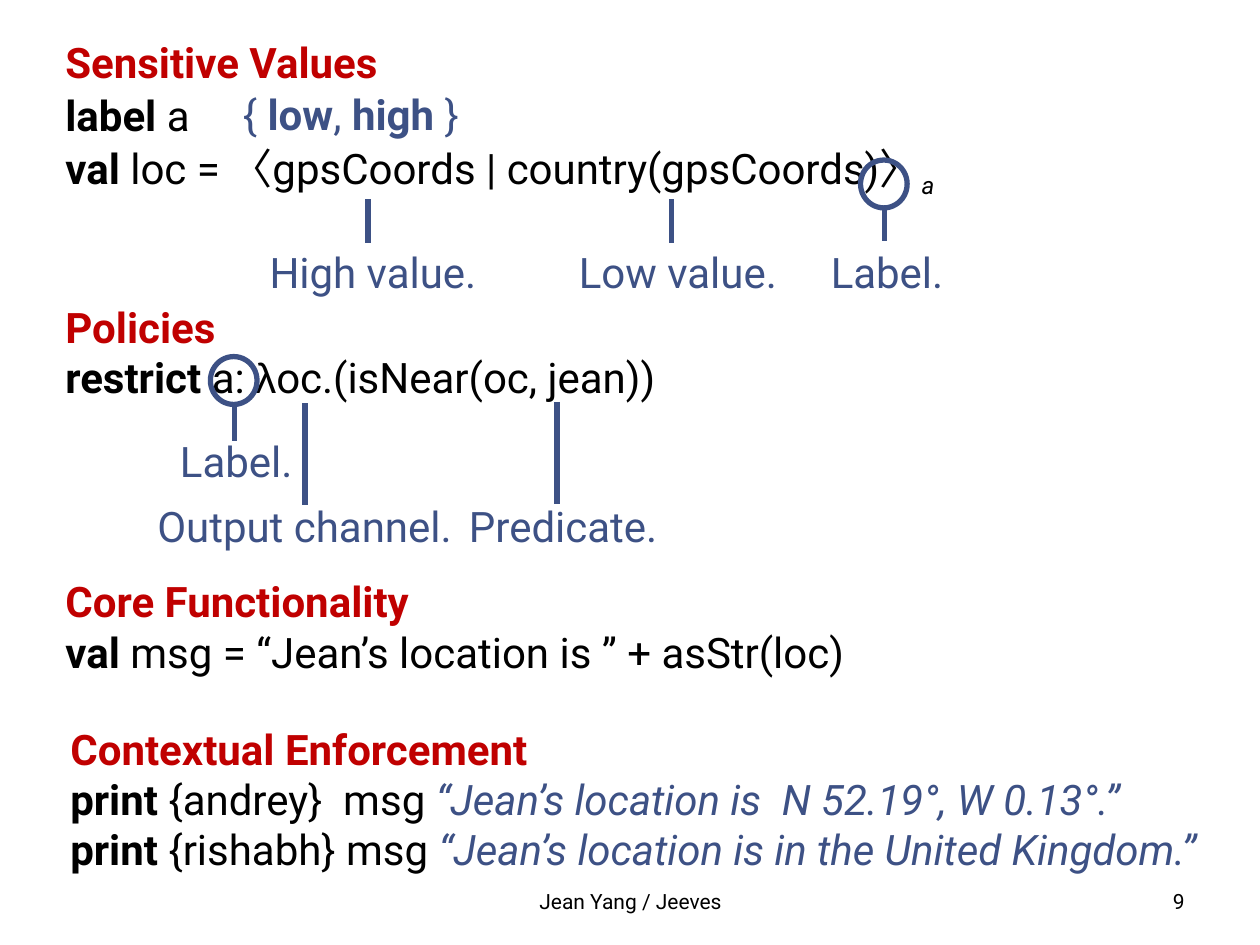
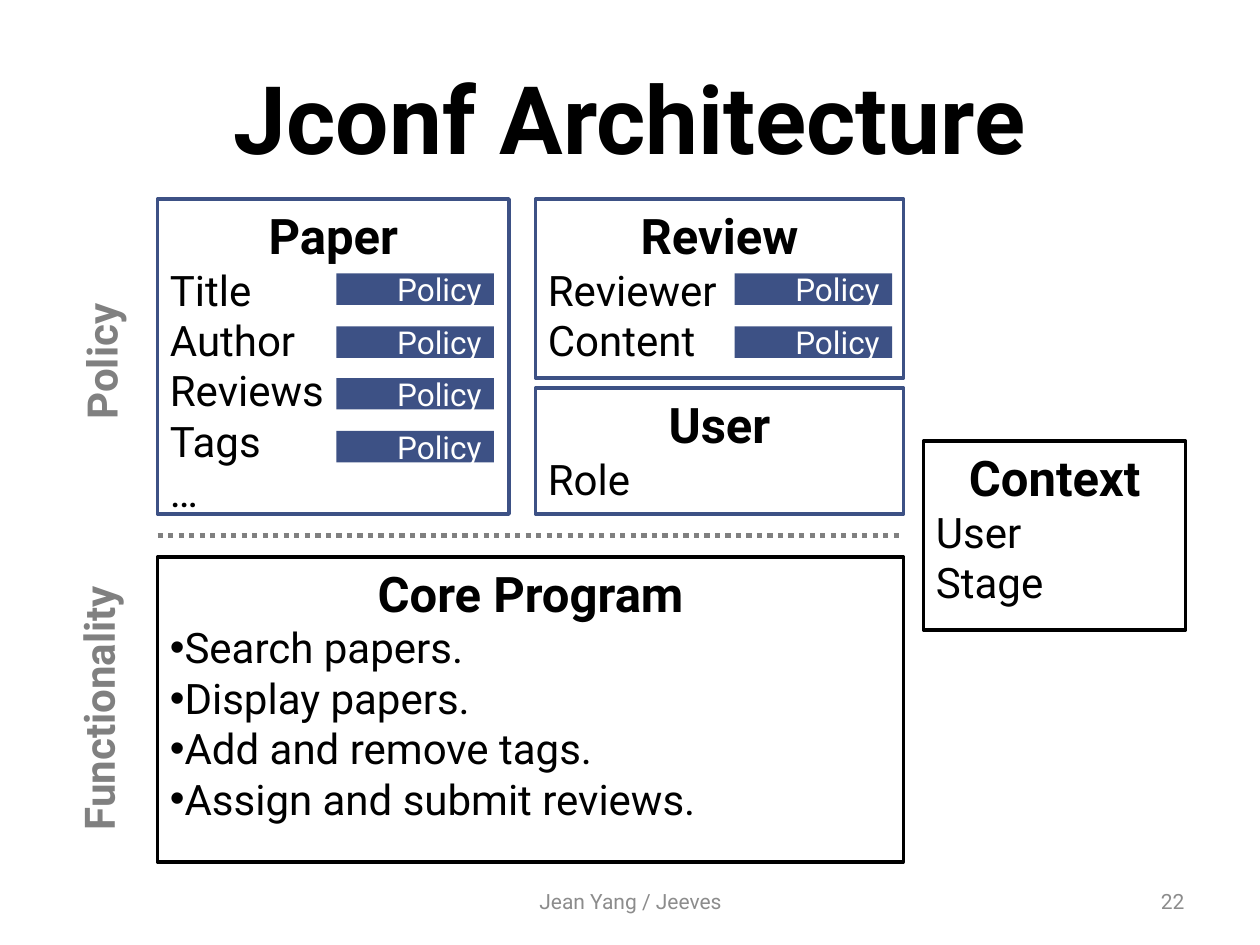
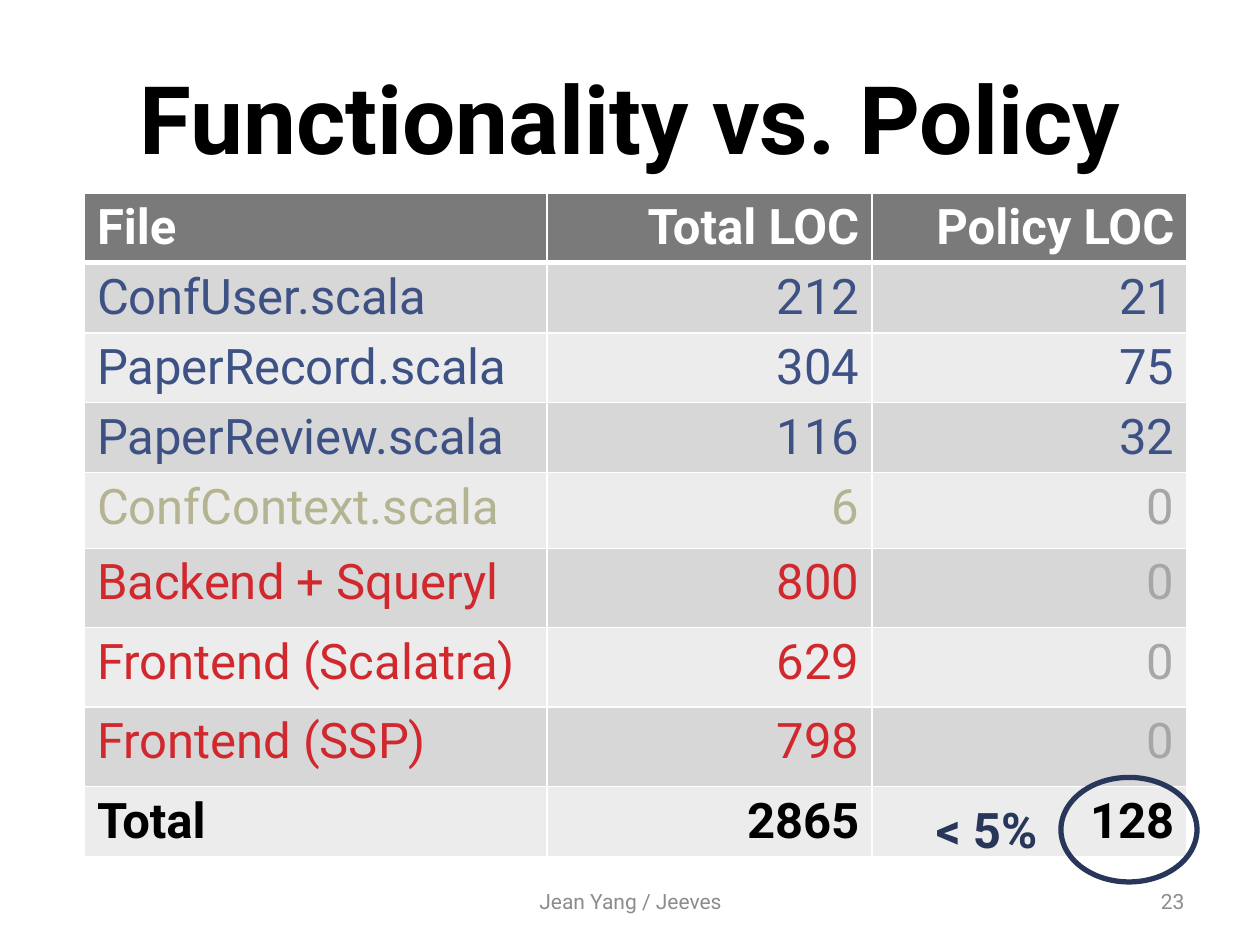
import lxml.etree
import pptx
import pptx.dml.color
import pptx.enum.dml
import pptx.enum.shapes
import pptx.enum.text
import pptx.oxml.ns
import pptx.util

Inches = pptx.util.Inches
Pt = pptx.util.Pt
ALIGN = pptx.enum.text.PP_ALIGN
ANCHOR = pptx.enum.text.MSO_ANCHOR
SHAPE = pptx.enum.shapes.MSO_SHAPE
DOTS = pptx.enum.dml.MSO_LINE.ROUND_DOT

BLACK, WHITE, RED = "000000", "FFFFFF", "C00000"
BLUE, NAVY, GREY, PALE = "3D5185", "283659", "808080", "8C8C8C"
HEAD, DARK, LIGHT = "7A7A7A", "D7D7D7", "ECECEC"
SAND, ROSE, ZERO = "B4B392", "D1282E", "A6A6A6"

BASE = {"name": "Roboto", "size": Pt(24), "bold": False, "italic": False}
BOLD = {"bold": True}
QUOTE = {"italic": True, "color": BLUE}
TOPIC = {"bold": True, "color": RED}
NOTE = {"color": BLUE}
SIDE = {"bold": True, "color": GREY}
LARGE = {"bold": True, "size": Pt(28)}
TITLE = {"bold": True, "size": Pt(54)}
LEFT, MID, RIGHT = ALIGN.LEFT, ALIGN.CENTER, ALIGN.RIGHT


def tint(code):
    return pptx.dml.color.RGBColor.from_string(code)


def add_tag(root, tag, **vals):
    return lxml.etree.SubElement(root, pptx.oxml.ns.qn(tag), vals)


def apply(item, vals):
    for key, val in vals.items():
        setattr(item, key, val)


def add_run(para, text, style):
    run = para.add_run()
    run.text = text
    vals = BASE | style
    run.font.color.rgb = tint(vals.pop("color", BLACK))
    shift = vals.pop("shift", None)
    apply(run.font, vals)
    if shift:
        run.font._element.set("baseline", shift)


def write(frame, lines, align=LEFT, anchor=ANCHOR.TOP):
    apply(frame, {"word_wrap": True, "vertical_anchor": anchor})
    for row, runs in enumerate(lines):
        para = frame.add_paragraph() if row else frame.paragraphs[0]
        para.alignment = align
        for text, style in runs:
            add_run(para, text, style)


def add_text(slide, at, lines, align=LEFT, anchor=ANCHOR.TOP, turn=0):
    box = slide.shapes.add_textbox(*map(Inches, at))
    box.rotation = turn
    write(box.text_frame, lines, align, anchor)


def add_form(slide, kind, at, fill=None, line=None, width=2):
    form = slide.shapes.add_shape(kind, *map(Inches, at))
    form.shadow.inherit = False
    if fill:
        form.fill.solid()
        form.fill.fore_color.rgb = tint(fill)
    else:
        form.fill.background()
    if line:
        form.line.color.rgb = tint(line)
        form.line.width = Pt(width)
    else:
        form.line.fill.background()
    return form


def add_line(slide, start, end, color=BLUE, dash=None):
    kind = pptx.enum.shapes.MSO_CONNECTOR.STRAIGHT
    link = slide.shapes.add_connector(kind, *map(Inches, start + end))
    link.line.color.rgb = tint(color)
    apply(link.line, {"width": Pt(3), "dash_style": dash})
    add_tag(link._element.spPr, "a:effectLst")


def add_card(slide, at, name, items, line=BLUE, mark=None):
    frame = add_form(slide, SHAPE.RECTANGLE, at, line=line).text_frame
    write(frame, [[(name, LARGE)]] + [[(item, {})] for item in items])
    first, *rest = frame.paragraphs
    first.alignment = MID
    for para in rest if mark else []:
        props = para._p.get_or_add_pPr()
        apply_bullet = {"marL": "0", "indent": "0"}
        for key, val in apply_bullet.items():
            props.set(key, val)
        add_tag(props, "a:buFont", typeface="Arial")
        add_tag(props, "a:buChar", char=mark)


def add_badge(slide, left, row):
    at = (left, round(2.17 + row * 1.25 / 3, 2), 1.25, 0.25)
    badge = add_form(slide, SHAPE.RECTANGLE, at, fill=BLUE)
    style = {"size": Pt(18), "color": WHITE}
    write(badge.text_frame, [[("Policy", style)]], RIGHT, ANCHOR.MIDDLE)


def add_foot(slide, page, color=PALE):
    style = {"size": Pt(12), "color": color}
    for left, width, text, align in ((3.42, 3.17, "Jean Yang / Jeeves", MID),
                                     (7.17, 2.33, page, RIGHT)):
        add_text(slide, (left, 6.95, width, 0.4), [[(text, style)]],
                 align, ANCHOR.MIDDLE)


def add_title(slide, text):
    shape = slide.shapes.title
    at = map(Inches, (0.5, 0.3, 9, 1.25))
    apply(shape, dict(zip(("left", "top", "width", "height"), at)))
    shape.text_frame.auto_size = pptx.enum.text.MSO_AUTO_SIZE.NONE
    write(shape.text_frame, [[(text, TITLE)]], MID, ANCHOR.MIDDLE)


def add_edge(cell, row):
    props = cell._tc.get_or_add_tcPr()
    for side in "LRTB":
        thick = (row, side) in ((0, "B"), (1, "T"))
        line = add_tag(props, "a:ln" + side, w=str(Pt(3 if thick else 1)))
        add_tag(add_tag(line, "a:solidFill"), "a:srgbClr", val=WHITE)


def add_grid(slide, at, cols, highs, rows):
    table = slide.shapes.add_table(
        len(rows), len(cols), *map(Inches, at)).table
    for col, width in zip(table.columns, cols):
        col.width = Inches(width)
    for row, (high, (color, bold, *texts)) in enumerate(zip(highs, rows)):
        table.rows[row].height = Inches(high)
        fill = (DARK if row % 2 else LIGHT) if row else HEAD
        for col, text in enumerate(texts):
            cell = table.cell(row, col)
            add_edge(cell, row)
            cell.fill.solid()
            cell.fill.fore_color.rgb = tint(fill)
            style = {"size": Pt(28), "bold": bold,
                     "color": ZERO if text == "0" else color}
            write(cell.text_frame, [[(text, style)]], RIGHT if col else LEFT)


def show_code(slide):
    add_text(slide, (0.42, 1.08, 8.92, 0.5), [[
        ("val ", BOLD), ("loc = 〈gpsCoords | country(gpsCoords)〉", {}),
        ("a", {"italic": True, "shift": "-25000"})]])
    add_text(slide, (0.42, 0.66, 4, 0.5), [[("label", BOLD), (" a", {})]])
    add_text(slide, (0.42, 4.52, 7.65, 0.91), [
        [("Core Functionality", TOPIC)],
        [("val ", BOLD), ("msg = “Jean’s location is ” + asStr(loc)", {})]])
    add_text(slide, (0.46, 5.69, 9.46, 1.31), [
        [("Contextual Enforcement", TOPIC)],
        [("print", BOLD), (" {andrey}  msg ", {}),
         ("“Jean’s location is  N 52.19°, W 0.13°.”", QUOTE)],
        [("print", BOLD), (" {rishabh} msg ", {}),
         ("“Jean’s location is in the United Kingdom.”", QUOTE)]])
    add_text(slide, (0.42, 2.34, 6.75, 0.91), [
        [("Policies", TOPIC)],
        [("restrict ", BOLD), ("a: ", {}), ("λ", {"name": "Arial"}),
         ("oc.(isNear(oc, jean))", {})]])
    strong = NOTE | BOLD
    add_text(slide, (1.83, 0.65, 2.33, 0.5), [[
        ("{ ", NOTE), ("low", strong), (", ", NOTE), ("high", strong),
        (" }", NOTE)]])
    add_text(slide, (0.42, 0.24, 4, 0.5), [[("Sensitive Values", TOPIC)]])


def show_notes(slide):
    for left, top in ((1.67, 2.83), (6.83, 1.27)):
        add_form(slide, SHAPE.OVAL, (left, top, 0.37, 0.38),
                 line=BLUE, width=3)
    for x, top, end in ((1.86, 3.21, 3.5), (7.02, 1.65, 1.91),
                        (2.42, 3.2, 4.01), (4.42, 3.19, 4),
                        (2.92, 1.58, 1.93), (5.33, 1.58, 1.93)):
        add_line(slide, (x, top), (x, end))
    for text, left, top, width, align in (
            ("Label.", 1.33, 3.41, 1.58, LEFT),
            ("Label.", 6.25, 1.91, 1.58, MID),
            ("Output channel.", 1.15, 3.92, 2.6, LEFT),
            ("Predicate.", 3.17, 3.92, 2.6, MID),
            ("High value.", 1.75, 1.91, 2.42, MID),
            ("Low value.", 4.17, 1.91, 2.42, MID)):
        add_text(slide, (left, top, width, 0.5), [[(text, NOTE)]], align)


def show_parts(slide):
    add_title(slide, "Jconf Architecture")
    add_card(slide, (4.25, 3.08, 2.92, 1), "User", ["Role"])
    add_card(slide, (1.25, 1.58, 2.79, 2.5), "Paper",
             ["Title", "Author", "Reviews", "Tags", "…"])
    add_card(slide, (4.25, 1.58, 2.92, 1.42), "Review",
             ["Reviewer", "Content"])
    add_card(slide, (7.33, 3.5, 2.08, 1.5), "Context",
             ["User", "Stage"], BLACK)
    add_card(slide, (1.25, 4.42, 5.92, 2.42), "Core Program",
             ["Search papers.", "Display papers.", "Add and remove tags.",
              "Assign and submit reviews."], BLACK, "•")
    for left, count in ((2.67, 4), (5.83, 2)):
        for row in range(count):
            add_badge(slide, left, row)
    add_line(slide, (1.25, 4.25), (7.17, 4.25), GREY, DOTS)
    for text, left, top in (("Policy", -0.49, 2.62),
                            ("Functionality", -0.51, 5.37)):
        add_text(slide, (left, top, 2.58, 0.5), [[(text, SIDE)]],
                 MID, turn=270)


def show_counts(slide):
    add_title(slide, "Functionality vs. Policy")
    add_grid(slide, (0.67, 1.53, 8.75, 5.32), (3.67, 2.58, 2.5),
             [0.53] * 4 + [0.6] + [0.63] * 3 + [0.53], (
        (WHITE, True, "File", "Total LOC", "Policy LOC"),
        (BLUE, False, "ConfUser.scala", "212", "21"),
        (BLUE, False, "PaperRecord.scala", "304", "75"),
        (BLUE, False, "PaperReview.scala", "116", "32"),
        (SAND, False, "ConfContext.scala", "6", "0"),
        (ROSE, False, "Backend + Squeryl", "800", "0"),
        (ROSE, False, "Frontend (Scalatra)", "629", "0"),
        (ROSE, False, "Frontend (SSP)", "798", "0"),
        (BLACK, True, "Total", "2865", "128")))
    add_form(slide, SHAPE.OVAL, (8.42, 6.17, 1.08, 0.83), line=NAVY, width=3)
    add_text(slide, (7.33, 6.3, 1.33, 0.57),
             [[("< 5%", LARGE | {"color": NAVY})]])


def main():
    deck = pptx.Presentation()
    apply(deck, {"slide_width": Inches(10), "slide_height": Inches(7.5)})
    plain, titled = deck.slide_layouts[6], deck.slide_layouts[5]
    code, parts, counts = [deck.slides.add_slide(layout)
                           for layout in (plain, titled, titled)]
    show_code(code)
    show_notes(code)
    show_parts(parts)
    show_counts(counts)
    add_foot(code, "9", BLACK)
    add_foot(parts, "22")
    add_foot(counts, "23")
    deck.save("out.pptx")


if __name__ == "__main__":
    main()
